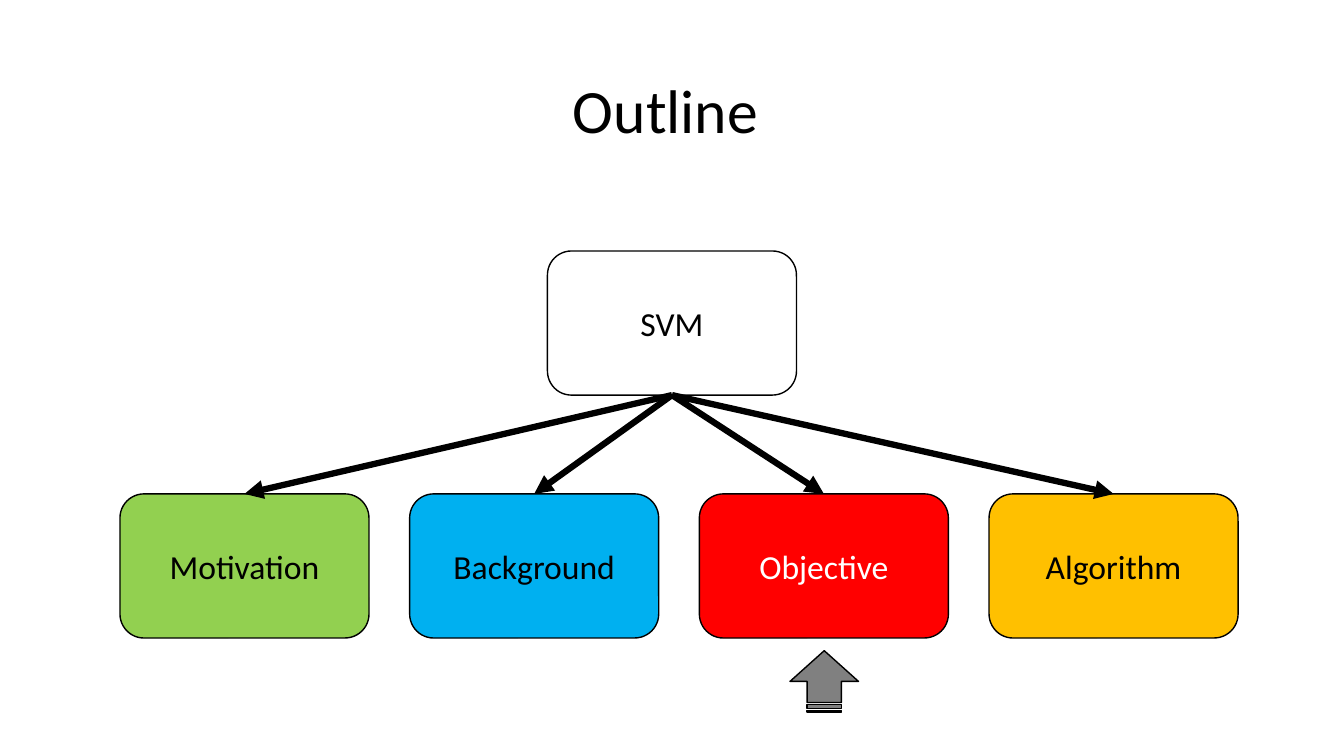
"""Build the SVM outline slide: one root box with arrows to four topic boxes."""
from dataclasses import dataclass

import pptx
import pptx.dml.color
import pptx.enum.shapes
import pptx.enum.text
import pptx.oxml
import pptx.oxml.ns
import pptx.shapes.autoshape
import pptx.shapes.connector
import pptx.slide
import pptx.text.text
import pptx.util

Inches = pptx.util.Inches
RGBColor = pptx.dml.color.RGBColor
MSO_SHAPE = pptx.enum.shapes.MSO_SHAPE

BLACK = RGBColor(0x00, 0x00, 0x00)
WHITE = RGBColor(0xFF, 0xFF, 0xFF)
GREEN = RGBColor(0x92, 0xD0, 0x50)
BLUE = RGBColor(0x00, 0xB0, 0xF0)
RED = RGBColor(0xFF, 0x00, 0x00)
AMBER = RGBColor(0xFF, 0xC0, 0x00)
GRAY = RGBColor(0x80, 0x80, 0x80)

FONT = "Calibri"
BOX_WIDTH, BOX_HEIGHT = 2.47, 1.43
TOPIC_LEFT, TOPIC_TOP = 1.19, 4.9
TOPIC_STEP = (9.81 - TOPIC_LEFT) / 3
BOTTOM, TOP = 2, 0


@dataclass(frozen=True)
class Topic:
    label: str
    fill: RGBColor
    color: RGBColor = BLACK


ROOT = Topic("SVM", WHITE)
TOPICS = [
    Topic("Motivation", GREEN),
    Topic("Background", BLUE),
    Topic("Objective", RED, WHITE),
    Topic("Algorithm", AMBER),
]


def write_text(frame: pptx.text.text.TextFrame, text: str, *, size: float,
               color: RGBColor = BLACK, line_spacing: float = 1.0) -> None:
    frame.word_wrap = True
    frame.vertical_anchor = pptx.enum.text.MSO_ANCHOR.MIDDLE
    paragraph = frame.paragraphs[0]
    paragraph.alignment = pptx.enum.text.PP_ALIGN.CENTER
    paragraph.line_spacing = line_spacing
    run = paragraph.add_run()
    run.text = text
    run.font.name = FONT
    run.font.size = pptx.util.Pt(size)
    run.font.color.rgb = color


def add_outlined(slide: pptx.slide.Slide, kind: MSO_SHAPE, left: float, top: float,
                 width: float, height: float,
                 fill: RGBColor) -> pptx.shapes.autoshape.Shape:
    shape = slide.shapes.add_shape(
        kind, Inches(left), Inches(top), Inches(width), Inches(height))
    shape.shadow.inherit = False
    shape.fill.solid()
    shape.fill.fore_color.rgb = fill
    shape.line.color.rgb = BLACK
    shape.line.width = pptx.util.Pt(1)
    return shape


def add_box(slide: pptx.slide.Slide, topic: Topic, left: float,
            top: float) -> pptx.shapes.autoshape.Shape:
    box = add_outlined(slide, MSO_SHAPE.ROUNDED_RECTANGLE, left, top,
                       BOX_WIDTH, BOX_HEIGHT, topic.fill)
    write_text(box.text_frame, topic.label, size=24, color=topic.color)
    return box


def add_arrow(slide: pptx.slide.Slide, parent: pptx.shapes.autoshape.Shape,
              child: pptx.shapes.autoshape.Shape) -> None:
    arrow = slide.shapes.add_connector(
        pptx.enum.shapes.MSO_CONNECTOR.STRAIGHT, 0, 0, 0, 0)
    arrow.begin_connect(parent, BOTTOM)
    arrow.end_connect(child, TOP)
    arrow.line.color.rgb = BLACK
    arrow.line.width = pptx.util.Pt(4.5)
    namespace = pptx.oxml.ns.nsdecls("a")
    arrow.line._get_or_add_ln().append(
        pptx.oxml.parse_xml(f'<a:tailEnd {namespace} type="triangle"/>'))
    arrow._element.spPr.append(pptx.oxml.parse_xml(f"<a:effectLst {namespace}/>"))


def main() -> None:
    deck = pptx.Presentation()
    deck.slide_width, deck.slide_height = Inches(13.33), Inches(7.5)
    slide = deck.slides.add_slide(deck.slide_layouts[5])

    title = slide.shapes.title
    title.left, title.top = Inches(0.92), Inches(0.4)
    title.width, title.height = Inches(11.5), Inches(1.45)
    write_text(title.text_frame, "Outline ", size=44, line_spacing=0.9)

    root = add_box(slide, ROOT, 5.43, 2.49)
    for index, topic in enumerate(TOPICS):
        box = add_box(slide, topic, TOPIC_LEFT + index * TOPIC_STEP, TOPIC_TOP)
        add_arrow(slide, root, box)

    pointer = add_outlined(slide, MSO_SHAPE.STRIPED_RIGHT_ARROW,
                           7.87, 6.42, 0.61, 0.68, GRAY)
    pointer.rotation = 270

    deck.save("out.pptx")


if __name__ == "__main__":
    main()
